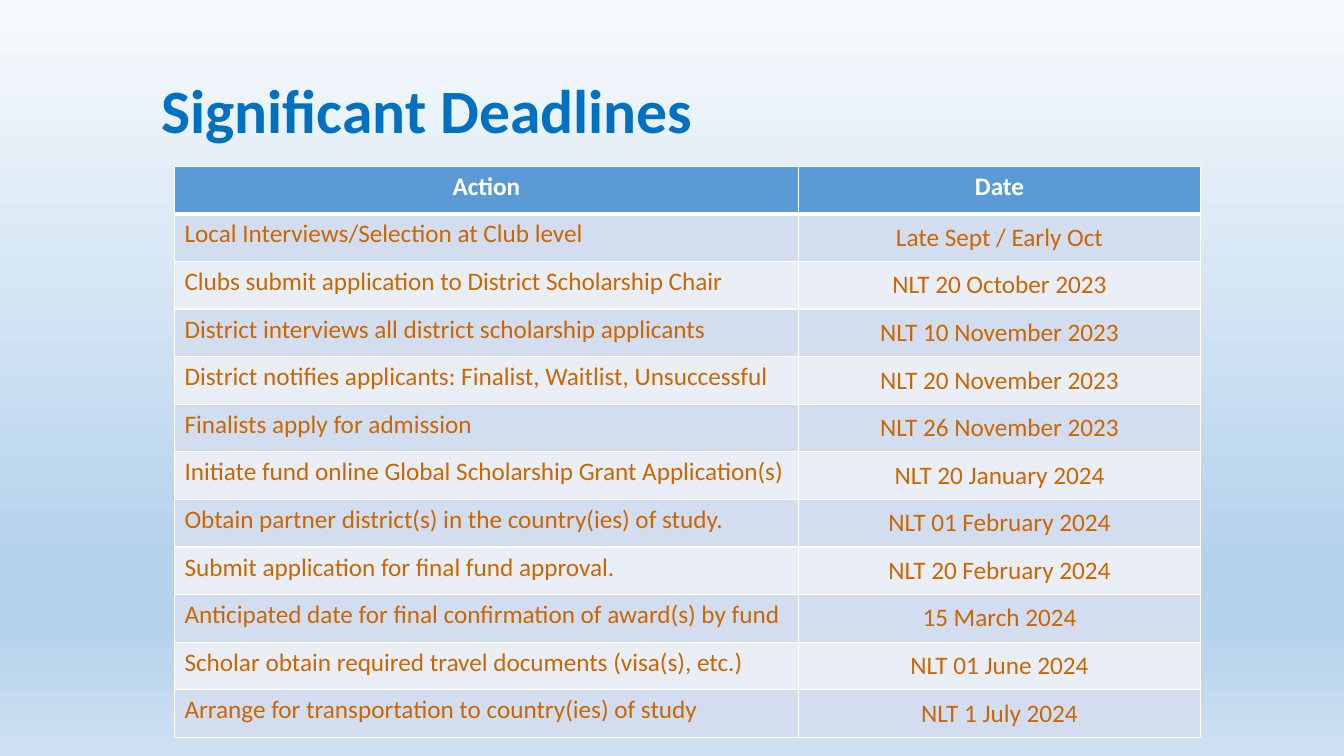
from dataclasses import dataclass

from lxml.etree import SubElement
from pptx import Presentation
from pptx.dml.color import RGBColor
from pptx.enum.text import MSO_ANCHOR, PP_ALIGN
from pptx.oxml import parse_xml
from pptx.oxml.ns import nsdecls, qn
from pptx.slide import Slide
from pptx.table import _Cell
from pptx.text.text import _Paragraph
from pptx.util import Pt

COLORS = {
    "title": "0070C0",
    "header": "5B9BD5",
    "band_dark": "D2DEEF",
    "band_light": "EAEFF7",
    "body": "CC6600",
    "white": "FFFFFF",
}
BACKGROUND_STOPS = {0: "F7FAFD", 74: "B5D2EC", 83: "B5D2EC", 100: "CEE1F2"}
TITLE_FONT = {"name": "Calibri", "size": Pt(44), "bold": True}
HEADER_FONT = {"name": "Calibri", "size": Pt(18), "bold": True}
BODY_FONT = {"name": "Calibri", "size": Pt(18), "bold": False}
COLUMN_WIDTHS = (445.7, 287.3)
ROW_HEIGHT = 34
THIN, THICK = 1, 3


@dataclass(frozen=True)
class Deadline:
    action: str
    date: str


DEADLINES = [
    Deadline("Local Interviews/Selection at Club level", "Late Sept / Early Oct"),
    Deadline("Clubs submit application to District Scholarship Chair", "NLT 20 October 2023"),
    Deadline("District interviews all district scholarship applicants", "NLT 10 November 2023"),
    Deadline("District notifies applicants: Finalist, Waitlist, Unsuccessful", "NLT 20 November 2023"),
    Deadline("Finalists apply for admission", "NLT 26 November 2023"),
    Deadline("Initiate fund online Global Scholarship Grant Application(s)", "NLT 20 January 2024"),
    Deadline("Obtain partner district(s) in the country(ies) of study.", "NLT 01 February 2024"),
    Deadline("Submit application for final fund approval.", "NLT 20 February 2024"),
    Deadline("Anticipated date for final confirmation of award(s) by fund", "15 March 2024"),
    Deadline("Scholar obtain required travel documents (visa(s), etc.)", "NLT 01 June 2024"),
    Deadline("Arrange for transportation to country(ies) of study", "NLT 1 July 2024"),
]


def write(p: _Paragraph, text: str, font: dict, color: str) -> None:
    r = p.add_run()
    r.text = text
    for name, value in font.items():
        setattr(r.font, name, value)
    r.font.color.rgb = RGBColor.from_string(COLORS[color])


def paint_background(s: Slide) -> None:
    fill = s.background.fill
    fill.gradient()
    fill.gradient_angle = 270
    stops = s.element.find(".//" + qn("a:gsLst"))
    for stop in list(stops):
        stops.remove(stop)
    for percent, color in BACKGROUND_STOPS.items():
        stop = SubElement(stops, qn("a:gs"), pos=str(percent * 1000))
        SubElement(stop, qn("a:srgbClr"), val=color)


def add_title(s: Slide, text: str) -> None:
    tf = s.shapes.add_textbox(Pt(108), Pt(28.8), Pt(743), Pt(104.4)).text_frame
    tf.word_wrap = True
    tf.vertical_anchor = MSO_ANCHOR.MIDDLE
    p = tf.paragraphs[0]
    p.line_spacing = 0.9
    write(p, text, TITLE_FONT, "title")


def set_borders(cell: _Cell, top: int, bottom: int) -> None:
    """Draw white borders; side borders are always thin."""
    tc_pr = cell._tc.get_or_add_tcPr()
    widths = {"lnL": THIN, "lnR": THIN, "lnT": top, "lnB": bottom}
    for i, (side, width) in enumerate(widths.items()):
        tc_pr.insert(i, parse_xml(
            f'<a:{side} {nsdecls("a")} w="{Pt(width)}"><a:solidFill>'
            f'<a:srgbClr val="{COLORS["white"]}"/></a:solidFill></a:{side}>'))


def add_deadline_table(s: Slide) -> None:
    rows = [Deadline("Action", "Date"), *DEADLINES]
    table = s.shapes.add_table(
        len(rows), len(COLUMN_WIDTHS), Pt(124.6), Pt(118.8),
        Pt(sum(COLUMN_WIDTHS)), Pt(ROW_HEIGHT * len(rows))).table
    table.horz_banding = False
    for column, width in zip(table.columns, COLUMN_WIDTHS):
        column.width = Pt(width)
    for i, row in enumerate(rows):
        header = i == 0
        band = "header" if header else "band_dark" if i % 2 else "band_light"
        for j, text in enumerate((row.action, row.date)):
            cell = table.cell(i, j)
            cell.fill.solid()
            cell.fill.fore_color.rgb = RGBColor.from_string(COLORS[band])
            set_borders(cell, THICK if i == 1 else THIN, THICK if header else THIN)
            p = cell.text_frame.paragraphs[0]
            if header or j == 1:
                p.alignment = PP_ALIGN.CENTER
            if not header and j == 1:
                cell.vertical_anchor = MSO_ANCHOR.MIDDLE
            write(p, text, HEADER_FONT if header else BODY_FONT,
                  "white" if header else "body")


def main() -> None:
    prs = Presentation()
    prs.slide_width, prs.slide_height = Pt(960), Pt(540)
    s = prs.slides.add_slide(prs.slide_layouts[6])
    paint_background(s)
    add_title(s, "Significant Deadlines")
    add_deadline_table(s)
    prs.save("out.pptx")


if __name__ == "__main__":
    main()
